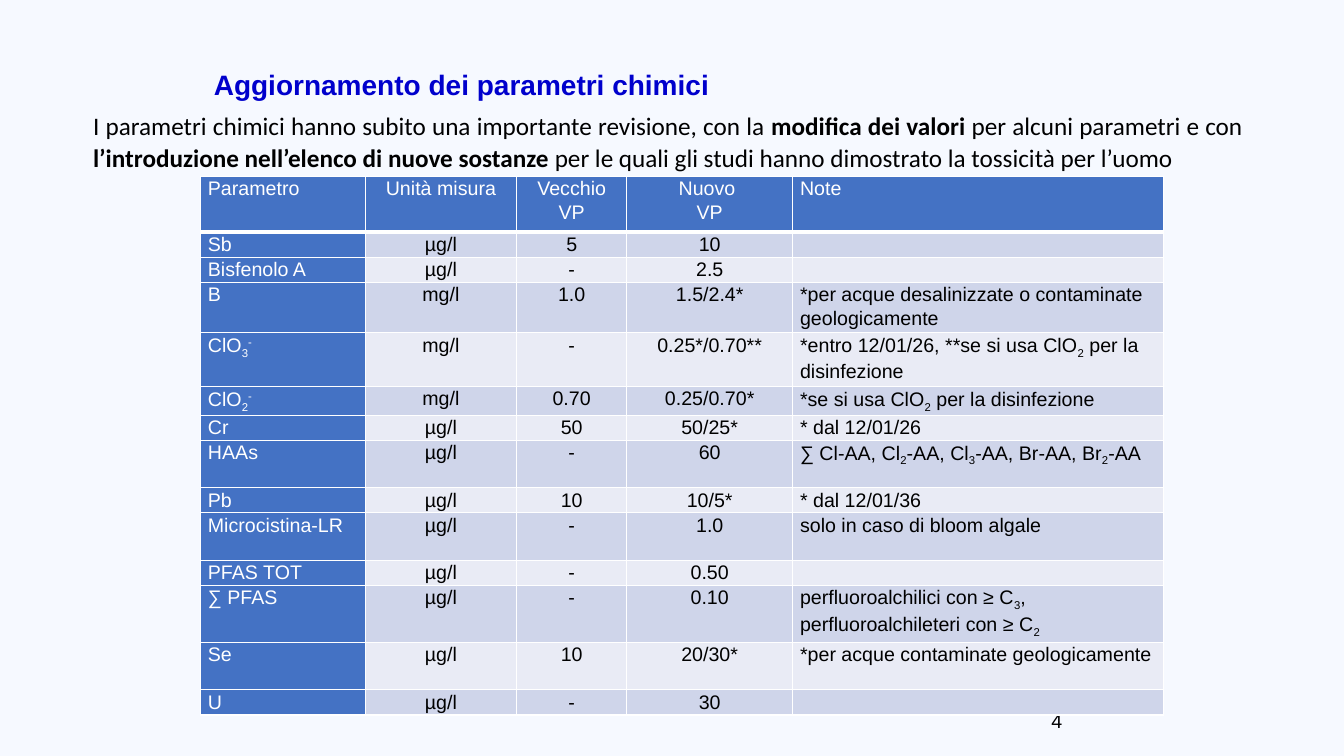
from dataclasses import dataclass

from lxml import etree
from pptx import Presentation
from pptx import util as u
from pptx.dml.color import RGBColor
from pptx.enum import text
from pptx.oxml.ns import qn

# Content: in table cells "|" separates spans, "_" lowers and "^" raises a span
TITLE = "Aggiornamento dei parametri chimici"
INTRO = [
    ("I parametri chimici hanno subito una importante revisione, con la ", False),
    ("modifica dei valori ", True),
    ("per alcuni parametri e con ", False),
    ("l’introduzione nell’elenco di nuove sostanze ", True),
    ("per le quali gli studi hanno dimostrato la tossicità per l’uomo", False),
]
PAGE_NUMBER = "4"
HEADER = ("Parametro", "Unità misura", "Vecchio VP", "Nuovo \nVP", "Note")
PARAMETERS = [
    ("Sb", "µg/l", "5", "10", ""),
    ("Bisfenolo A", "µg/l", "-", "2.5", ""),
    ("B", "mg/l", "1.0", "1.5/2.4*",
     "*per acque desalinizzate o contaminate geologicamente"),
    ("ClO|_3|^-", "mg/l", "-", "0.25*/0.70**",
     "*entro 12/01/26, **se si usa ClO|_2| per la disinfezione"),
    ("ClO|_2|^-", "mg/l", "0.70", "0.25/0.70*", "*se si usa ClO|_2| per la disinfezione"),
    ("Cr", "µg/l", "50", "50/25*", "* dal 12/01/26"),
    ("HAAs", "µg/l", "-", "60", "∑ Cl-AA, Cl|_2|-AA, Cl|_3|-AA, Br-AA, Br|_2|-AA"),
    ("Pb", "µg/l", "10", "10/5*", "* dal 12/01/36"),
    ("Microcistina-LR", "µg/l", "-", "1.0", "solo in caso di bloom algale"),
    ("PFAS TOT", "µg/l", "-", "0.50", ""),
    ("∑ PFAS", "µg/l", "-", "0.10",
     "perfluoroalchilici con ≥ C|_3|, perfluoroalchileteri con ≥ C|_2"),
    ("Se", "µg/l", "10", "20/30*", "*per acque contaminate geologicamente"),
    ("U", "µg/l", "-", "30", ""),
]
TALL_ROWS = {"B", "ClO|_3|^-", "HAAs", "Microcistina-LR", "∑ PFAS", "Se"}
COLUMN_WIDTHS = (157, 144, 105, 158, 353)
HEADER_HEIGHT, TALL_HEIGHT, SHORT_HEIGHT = 53, 45, 22
BASELINES = {"_": "-25000", "^": "30000"}


@dataclass(frozen=True)
class Theme:
    background: str = "F6F9FF"
    title: str = "0000CC"
    ink: str = "000000"
    white: str = "FFFFFF"
    accent: str = "4472C4"
    bands: tuple = ("CFD5EA", "E9EBF5")
    heading_font: str = "Arial"
    body_font: str = "Calibri"
    title_size: int = 20
    intro_size: int = 18
    table_size: int = 14
    line_spacing: float = 1.07


THEME = Theme()


def px(length):
    return u.Emu(length * 9525)


def place(shape, left, top, width, height):
    shape.left, shape.top = px(left), px(top)
    shape.width, shape.height = px(width), px(height)


def set_font(para, name, size, color, bold=False):
    para.font.name = name
    para.font.size = u.Pt(size)
    para.font.bold = bold
    para.font.color.rgb = RGBColor.from_string(color)


def set_borders(cell, bottom):
    properties = cell._tc.get_or_add_tcPr()
    for side, width in (("L", 1), ("R", 1), ("T", 1), ("B", bottom)):
        line = etree.SubElement(properties, qn(f"a:ln{side}"), w=str(u.Pt(width)))
        fill = etree.SubElement(line, qn("a:solidFill"))
        etree.SubElement(fill, qn("a:srgbClr"), val=THEME.white)


def fill_cell(cell, content, fill, color, align, bottom=1):
    set_borders(cell, bottom)
    cell.fill.solid()
    cell.fill.fore_color.rgb = RGBColor.from_string(fill)
    cell.margin_left = cell.margin_right = px(7)
    cell.margin_top = cell.margin_bottom = 0
    frame = cell.text_frame
    for index, line in enumerate(content.split("\n")):
        para = frame.add_paragraph() if index else frame.paragraphs[0]
        para.alignment = align
        para.line_spacing = THEME.line_spacing
        set_font(para, THEME.heading_font, THEME.table_size, color)
        if not line:
            etree.SubElement(para._p, qn("a:endParaRPr"), sz=str(THEME.table_size * 100))
            continue
        for piece in line.split("|"):
            span = para.add_run()
            span.text = piece.lstrip("_^")
            if piece[0] in BASELINES:
                span._r.get_or_add_rPr().set("baseline", BASELINES[piece[0]])


def add_heading(page):
    title = page.shapes.title
    place(title, 194, 59, 854, 42)
    frame = title.text_frame
    frame.auto_size = text.MSO_AUTO_SIZE.NONE
    frame.vertical_anchor = text.MSO_ANCHOR.MIDDLE
    frame.text = TITLE
    para = frame.paragraphs[0]
    para.alignment = text.PP_ALIGN.LEFT
    set_font(para, THEME.heading_font, THEME.title_size, THEME.title, True)


def add_intro(page):
    body = page.placeholders[1]
    place(body, 79, 98, 1114, 72)
    frame = body.text_frame
    frame.auto_size = text.MSO_AUTO_SIZE.NONE
    para = frame.paragraphs[0]
    para.alignment = text.PP_ALIGN.JUSTIFY
    para.line_spacing = THEME.line_spacing
    para.space_before = u.Pt(0)
    para.space_after = u.Pt(8)
    properties = para._p.get_or_add_pPr()
    properties.set("marL", "0")
    properties.set("indent", "0")
    etree.SubElement(properties, qn("a:buNone"))
    set_font(para, THEME.body_font, THEME.intro_size, THEME.ink)
    for words, bold in INTRO:
        span = para.add_run()
        span.text = words
        span.font.bold = bold


def add_page_number(page):
    box = page.shapes.add_textbox(px(992), px(667), px(288), px(38))
    frame = box.text_frame
    frame.word_wrap = True
    frame.vertical_anchor = text.MSO_ANCHOR.MIDDLE
    frame.text = PAGE_NUMBER
    set_font(frame.paragraphs[0], THEME.heading_font, THEME.table_size, THEME.ink)


def add_parameter_table(page):
    rows = [HEADER, *PARAMETERS]
    heights = [HEADER_HEIGHT] + [
        TALL_HEIGHT if row[0] in TALL_ROWS else SHORT_HEIGHT for row in PARAMETERS]
    table = page.shapes.add_table(
        len(rows), len(HEADER), px(191), px(168),
        px(sum(COLUMN_WIDTHS)), px(sum(heights))).table
    table.first_row = table.horz_banding = False
    for column, width in zip(table.columns, COLUMN_WIDTHS):
        column.width = px(width)
    for r, row in enumerate(rows):
        table.rows[r].height = px(heights[r])
        for c, content in enumerate(row):
            solid = r == 0 or c == 0
            fill_cell(
                table.cell(r, c), content,
                fill=THEME.accent if solid else THEME.bands[(r - 1) % 2],
                color=THEME.white if solid else THEME.ink,
                align=text.PP_ALIGN.LEFT if c in (0, 4) else text.PP_ALIGN.CENTER,
                bottom=1 if r else 3)


def main():
    deck = Presentation()
    deck.slide_width, deck.slide_height = px(1280), px(720)
    page = deck.slides.add_slide(deck.slide_layouts[1])
    page.background.fill.solid()
    page.background.fill.fore_color.rgb = RGBColor.from_string(THEME.background)
    add_heading(page)
    add_intro(page)
    add_page_number(page)
    add_parameter_table(page)
    deck.save("out.pptx")


if __name__ == "__main__":
    main()
